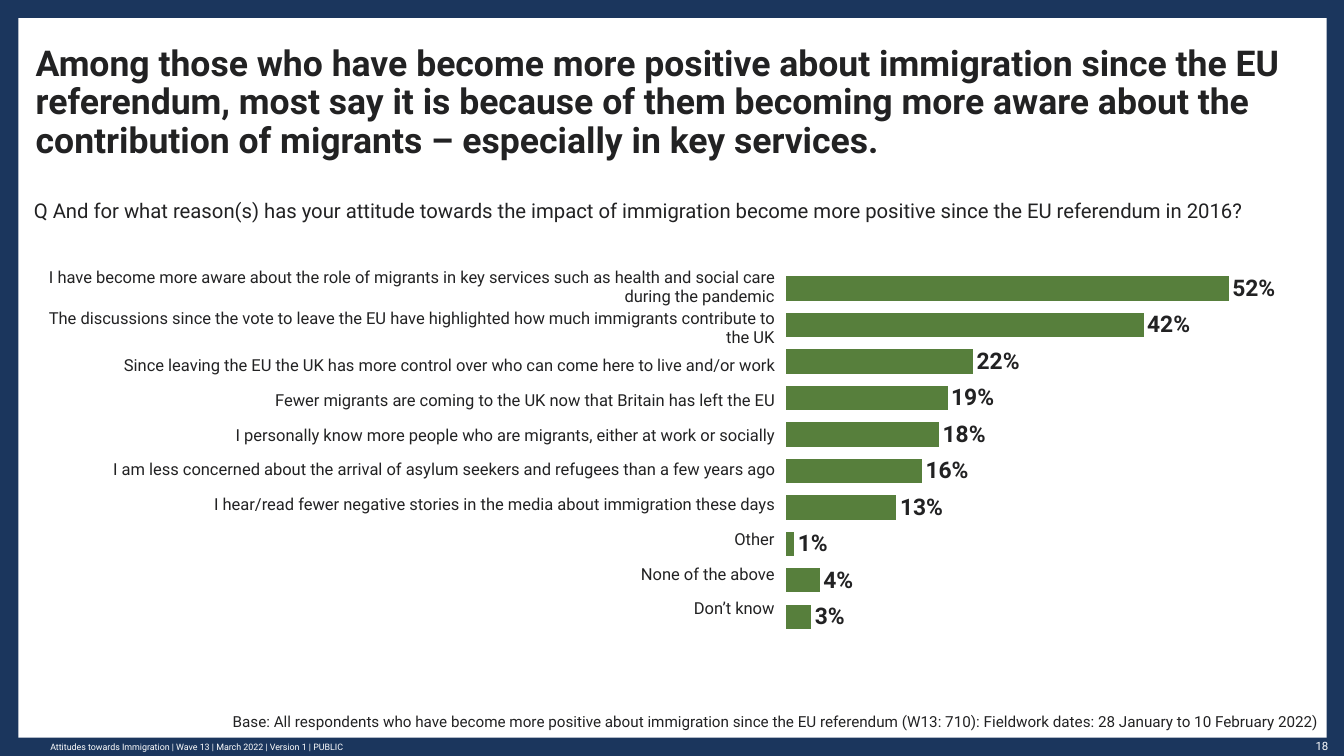
import pptx
import pptx.chart.data
import pptx.dml.color
import pptx.enum.chart
import pptx.enum.text
import pptx.oxml
import pptx.oxml.ns
import pptx.util

Inches = pptx.util.Inches
Pt = pptx.util.Pt
PP_ALIGN = pptx.enum.text.PP_ALIGN
MSO_ANCHOR = pptx.enum.text.MSO_ANCHOR

FONT = "Roboto"
NAVY = pptx.dml.color.RGBColor(0x1B, 0x36, 0x5D)
INK = pptx.dml.color.RGBColor(0x22, 0x22, 0x23)
GREEN = pptx.dml.color.RGBColor(0x57, 0x7F, 0x3C)
WHITE = pptx.dml.color.RGBColor(0xFF, 0xFF, 0xFF)

TITLE = (
    "Among those who have become more positive about immigration since the EU "
    "referendum, most say it is because of them becoming more aware about the "
    "contribution of migrants – especially in key services."
)
QUESTION = (
    "Q And for what reason(s) has your attitude towards the impact of immigration "
    "become more positive since the EU referendum in 2016?"
)
BASE = (
    "Base: All respondents who have become more positive about immigration since the "
    "EU referendum (W13: 710): Fieldwork dates: 28 January to 10 February 2022)"
)
FOOTER = "Attitudes towards Immigration | Wave 13 | March 2022 | Version 1 | PUBLIC"

REASONS = [
    ("I have become more aware about the role of migrants in key services such as "
     "health and social care during the pandemic", 52),
    ("The discussions since the vote to leave the EU have highlighted how much "
     "immigrants contribute to the UK", 42),
    ("Since leaving the EU the UK has more control over who can come here to live "
     "and/or work", 22),
    ("Fewer migrants are coming to the UK now that Britain has left the EU", 19),
    ("I personally know more people who are migrants, either at work or socially", 18),
    ("I am less concerned about the arrival of asylum seekers and refugees than a "
     "few years ago", 16),
    ("I hear/read fewer negative stories in the media about immigration these days", 13),
    ("Other", 1),
    ("None of the above", 4),
    ("Don’t know", 3),
]
TWO_LINE_ROWS = 2

PLOT_LAYOUT = (
    "<c:layout %s><c:manualLayout><c:layoutTarget val='inner'/>"
    "<c:xMode val='edge'/><c:yMode val='edge'/><c:x val='0.61'/><c:y val='0.043'/>"
    "<c:w val='0.357'/><c:h val='0.922'/></c:manualLayout></c:layout>"
    % pptx.oxml.ns.nsdecls("c")
)


def set_font(font, size, color=INK, bold=False):
    font.name = FONT
    font.size = Pt(size)
    font.bold = bold
    font.color.rgb = color


def write(tf, text, size, color=INK, bold=False, align=PP_ALIGN.LEFT):
    p = tf.paragraphs[0]
    p.alignment = align
    r = p.add_run()
    r.text = text
    set_font(r.font, size, color, bold)
    return p


def prepare_frame(tf, anchor):
    """Remove the insets, wrap the text and anchor it."""
    tf.margin_left = tf.margin_top = tf.margin_right = tf.margin_bottom = 0
    tf.word_wrap = True
    tf.auto_size = pptx.enum.text.MSO_AUTO_SIZE.NONE
    tf.vertical_anchor = anchor


def add_text(s, box, text, size, color=INK, align=PP_ALIGN.LEFT, anchor=MSO_ANCHOR.TOP):
    sp = s.shapes.add_textbox(*map(Inches, box))
    prepare_frame(sp.text_frame, anchor)
    write(sp.text_frame, text, size, color, align=align)


def add_panel(s):
    sp = s.shapes.add_shape(
        pptx.enum.shapes.MSO_SHAPE.RECTANGLE,
        Inches(0.2), Inches(0.2), Inches(14.31), Inches(7.87))
    sp.shadow.inherit = False
    sp.fill.solid()
    sp.fill.fore_color.rgb = WHITE
    sp.line.fill.background()


def fill_title(s):
    sp = s.shapes.title
    sp.left, sp.top, sp.width, sp.height = map(Inches, (0.39, 0.91, 13.84, 0.85))
    prepare_frame(sp.text_frame, MSO_ANCHOR.BOTTOM)
    write(sp.text_frame, TITLE, 28, bold=True).line_spacing = 0.9


def add_reason_chart(s):
    data = pptx.chart.data.CategoryChartData(number_format="0")
    data.categories = [str(i) for i in range(1, len(REASONS) + 1)]
    data.add_series("Series 1", [value for _, value in REASONS])
    chart = s.shapes.add_chart(
        pptx.enum.chart.XL_CHART_TYPE.BAR_CLUSTERED,
        Inches(0.25), Inches(2.77), Inches(13.7), Inches(4.33), data).chart
    chart.has_legend = False
    chart.has_title = False
    set_font(chart.font, 10)

    chart.category_axis.reverse_order = True
    chart.category_axis.visible = False
    axis = chart.value_axis
    axis.minimum_scale = 0
    axis.maximum_scale = 52.4
    axis.has_major_gridlines = False
    axis.visible = False

    plot = chart.plots[0]
    plot.gap_width = 50
    plot.vary_by_categories = False
    fill = plot.series[0].format.fill
    fill.solid()
    fill.fore_color.rgb = GREEN

    plot.has_data_labels = True
    labels = plot.data_labels
    labels.show_value = True
    labels.number_format = "0\\%"
    labels.number_format_is_linked = False
    labels.position = pptx.enum.chart.XL_LABEL_POSITION.OUTSIDE_END
    set_font(labels.font, 18, bold=True)

    plot_area = chart.element.chart.plotArea
    for layout in plot_area.findall(pptx.oxml.ns.qn("c:layout")):
        plot_area.remove(layout)
    plot_area.insert(0, pptx.oxml.parse_xml(PLOT_LAYOUT))


def add_reason_table(s):
    table = s.shapes.add_table(
        len(REASONS), 1, Inches(0.37), Inches(2.91), Inches(8.11), Inches(3.98)).table
    table.first_row = False
    table.horz_banding = False
    for i, (reason, _) in enumerate(REASONS):
        table.rows[i].height = Inches(0.45 if i < TWO_LINE_ROWS else 0.38)
        cell = table.cell(i, 0)
        cell.fill.background()
        cell.margin_left = cell.margin_top = cell.margin_right = Inches(0.01)
        cell.margin_bottom = 0
        cell.vertical_anchor = MSO_ANCHOR.MIDDLE
        write(cell.text_frame, reason, 13, align=PP_ALIGN.RIGHT)


def main():
    prs = pptx.Presentation()
    prs.slide_width = Inches(14.7)
    prs.slide_height = Inches(8.27)
    s = prs.slides.add_slide(prs.slide_layouts.get_by_name("Title Only"))
    s.background.fill.solid()
    s.background.fill.fore_color.rgb = NAVY

    add_panel(s)
    # The title starts at the back of the slide; bring it in front of the panel.
    s.shapes.element.append(s.shapes.title.element)
    fill_title(s)
    add_text(s, (14.06, 8.09, 0.47, 0.17), "18", 9, WHITE, PP_ALIGN.RIGHT)
    add_text(s, (0.55, 8.07, 5.35, 0.2), FOOTER, 7, WHITE, anchor=MSO_ANCHOR.MIDDLE)
    add_text(s, (1.99, 7.79, 12.44, 0.2), BASE, 12, align=PP_ALIGN.RIGHT)
    add_text(s, (0.37, 2.17, 13.7, 0.27), QUESTION, 16)
    add_reason_chart(s)
    add_reason_table(s)
    prs.save("out.pptx")


if __name__ == "__main__":
    main()
